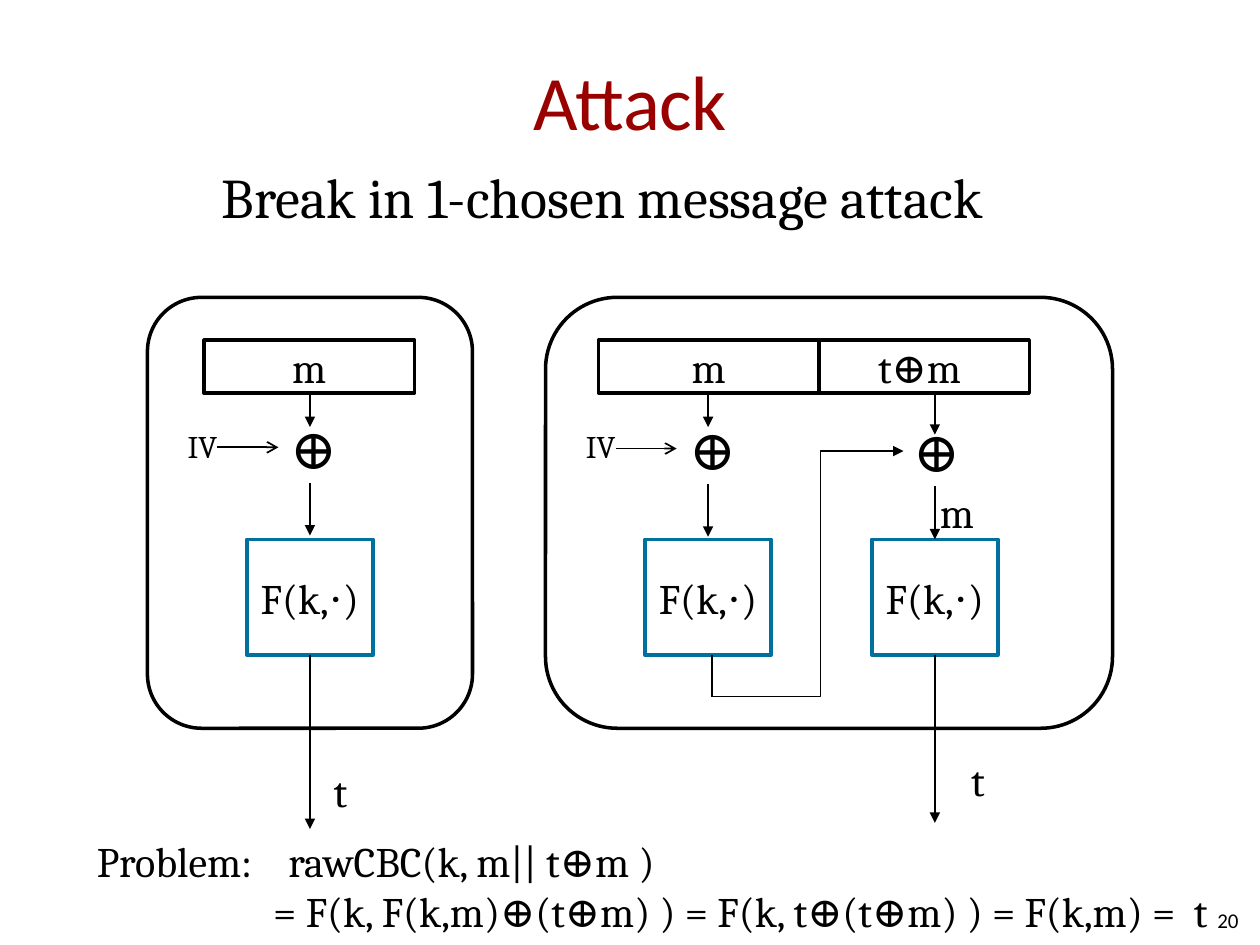
from lxml.etree import SubElement
from pptx import Presentation
from pptx.dml.color import RGBColor
from pptx.enum.shapes import MSO_CONNECTOR as CONNECTOR, MSO_SHAPE as SHAPE
from pptx.enum.text import MSO_ANCHOR as ANCHOR, PP_ALIGN as ALIGN
from pptx.oxml.ns import qn
from pptx.util import Inches, Pt

BLACK = RGBColor(0x00, 0x00, 0x00)
WHITE = RGBColor(0xFF, 0xFF, 0xFF)
RED = RGBColor(0x99, 0x00, 0x00)
BLUE = RGBColor(0x00, 0x70, 0x9E)


def set_text(shape, text, size, align=ALIGN.LEFT, font="Cambria", color=BLACK, wrap=False, inset=True):
    frame = shape.text_frame
    frame.text = text
    frame.word_wrap = wrap
    if not inset:
        frame.margin_left = frame.margin_right = frame.margin_top = frame.margin_bottom = 0
    for paragraph in frame.paragraphs:
        paragraph.alignment = align
        paragraph.font.name = font
        paragraph.font.size = Pt(size)
        paragraph.font.color.rgb = color
    return frame


def style_line(shape, width=0.75, head="triangle"):
    shape.line.color.rgb = BLACK
    shape.line.width = Pt(width)
    properties = shape._element.spPr
    if head:
        SubElement(properties.find(qn("a:ln")), qn("a:tailEnd"), type=head)
    SubElement(properties, qn("a:effectLst"))


prs = Presentation()
prs.slide_width, prs.slide_height = Inches(10), Inches(7.5)
slide = prs.slides.add_slide(prs.slide_layouts[5])
shapes = slide.shapes

# Title
title = shapes.title
title.left, title.top, title.width, title.height = Inches(0.5), Inches(0.17), Inches(9), Inches(1.25)
title_frame = set_text(title, "Attack", 44, ALIGN.CENTER, "Calibri", RED, wrap=True)
title_frame.vertical_anchor = ANCHOR.MIDDLE
title_frame.paragraphs[0].runs[0].font._element.set("spc", "-50")

# Frames, message blocks and cipher boxes
CIPHER = "F(k,⋅)"
boxes = [
    (SHAPE.ROUNDED_RECTANGLE, 1.17, 2.36, 2.58, 3.42, "", BLACK),
    (SHAPE.ROUNDED_RECTANGLE, 4.33, 2.36, 4.5, 3.42, "", BLACK),
    (SHAPE.RECTANGLE, 1.62, 2.7, 1.67, 0.42, "m", BLACK),
    (SHAPE.RECTANGLE, 4.75, 2.7, 1.75, 0.42, "m", BLACK),
    (SHAPE.RECTANGLE, 6.5, 2.7, 1.67, 0.42, "t⊕m ", BLACK),
] + [(SHAPE.RECTANGLE, left, 4.28, 1, 0.92, CIPHER, BLUE) for left in (1.96, 5.12, 6.92)]
for kind, left, top, width, height, text, outline in boxes:
    box = shapes.add_shape(kind, Inches(left), Inches(top), Inches(width), Inches(height))
    box.shadow.inherit = False
    box.fill.solid()
    box.fill.fore_color.rgb = WHITE
    box.line.color.rgb = outline
    box.line.width = Pt(2)
    if text:
        set_text(box, text, 24, ALIGN.CENTER).vertical_anchor = ANCHOR.MIDDLE

# Labels: text, size, left, top, width, height, inset
labels = [
    ("Break in 1-chosen message attack", 32, 1.76, 1.29, 6.48, 0.54, False),
    ("⊕", 32, 2.21, 3.23, 0.55, 0.64, True),
    ("⊕", 32, 5.37, 3.24, 0.55, 0.64, True),
    ("⊕", 32, 7.15, 3.26, 0.55, 0.64, True),
    ("IV", 18, 1.49, 3.39, 0.24, 0.3, False),
    ("IV", 18, 4.65, 3.39, 0.24, 0.3, False),
    ("m", 24, 7.46, 3.86, 0.28, 0.4, False),
    ("t", 24, 2.55, 6.03, 0.32, 0.5, True),
    ("t", 24, 7.61, 5.94, 0.32, 0.5, True),
]
for text, size, left, top, width, height, inset in labels:
    label = shapes.add_textbox(Inches(left), Inches(top), Inches(width), Inches(height))
    set_text(label, text, size, inset=inset)

# Arrows: from x, y to x, y, line width, head
arrows = [
    (x, start, x, end, 0.75, "triangle")
    for x, start, end in [
        (2.46, 3.12, 3.39), (2.46, 3.83, 4.25), (2.46, 5.2, 6.58),
        (5.62, 3.13, 3.39), (5.62, 3.84, 4.26),
        (7.42, 3.12, 3.45), (7.42, 3.86, 4.28), (7.42, 5.2, 6.53),
    ]
] + [
    (1.72, 3.55, 2.21, 3.55, 1, "arrow"),
    (4.89, 3.56, 5.37, 3.56, 1, "arrow"),
    (5.65, 5.2, 5.65, 5.53, 0.75, None),
]
for x1, y1, x2, y2, width, head in arrows:
    arrow = shapes.add_connector(CONNECTOR.STRAIGHT, Inches(x1), Inches(y1), Inches(x2), Inches(y2))
    style_line(arrow, width, head)

# Chaining path from the first cipher to the second XOR
chain_builder = shapes.build_freeform(Inches(5.65), Inches(5.53))
chain_points = [(6.51, 5.53), (6.51, 3.58), (7.17, 3.58)]
chain_builder.add_line_segments([(Inches(x), Inches(y)) for x, y in chain_points], close=False)
chain = chain_builder.convert_to_shape()
chain.fill.background()
style_line(chain)

# Problem statement, with its second line indented
problem = shapes.add_textbox(Inches(0.67), Inches(6.58), Inches(9.08), Inches(0.91))
problem_text = "Problem:\trawCBC(k, m|| t⊕m )\n= F(k, F(k,m)⊕(t⊕m) ) = F(k, t⊕(t⊕m) ) = F(k,m) =  t"
first, second = set_text(problem, problem_text, 24, wrap=True).paragraphs
first_properties = first._p.get_or_add_pPr()
tabs = first_properties.makeelement(qn("a:tabLst"))
SubElement(tabs, qn("a:tab"), pos=str(Inches(1.52)), algn="l")
first_properties.find(qn("a:defRPr")).addprevious(tabs)
second._p.get_or_add_pPr().set("marL", str(Inches(1.4)))

# Slide number
number = shapes.add_textbox(Inches(7.5), Inches(7.1), Inches(2.33), Inches(0.4))
number_frame = set_text(number, "20", 12, ALIGN.RIGHT, "Calibri", wrap=True, inset=False)
number_frame.vertical_anchor = ANCHOR.MIDDLE

prs.save("out.pptx")
